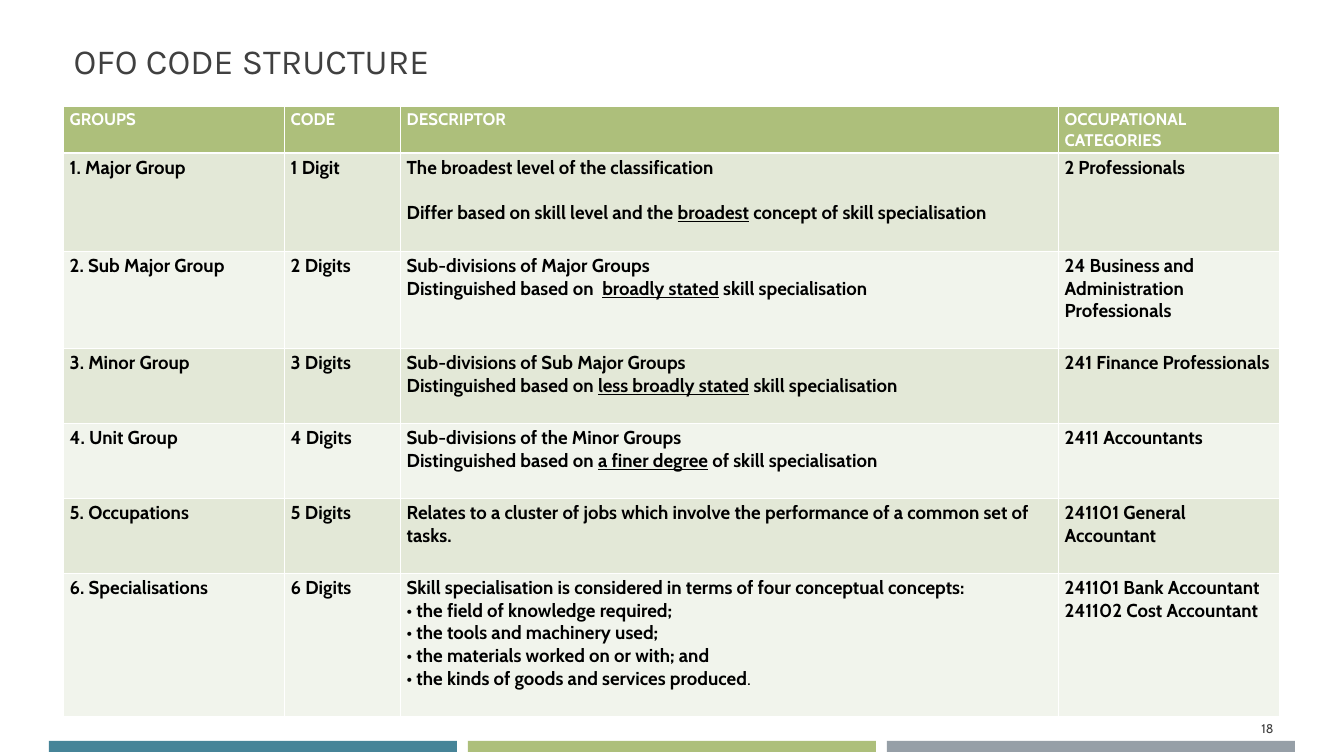
from lxml import etree
from pptx import Presentation
from pptx.dml.color import RGBColor
from pptx.enum.shapes import MSO_SHAPE
from pptx.enum.text import MSO_ANCHOR, PP_ALIGN
from pptx.oxml.ns import qn
from pptx.util import Emu, Pt

RECTANGLE = MSO_SHAPE.RECTANGLE
BOTTOM, MIDDLE = MSO_ANCHOR.BOTTOM, MSO_ANCHOR.MIDDLE
LEFT, RIGHT = PP_ALIGN.LEFT, PP_ALIGN.RIGHT

COLOURS = {
    "teal": "468498", "green": "ADBF7B", "grey": "969FA7",
    "dark_band": "E3E8D7", "light_band": "F1F4EC",
    "heading": "404040", "black": "000000", "white": "FFFFFF",
}
TITLE = {"name": "Karla", "size": Pt(37.8), "color": "heading"}
NUMBER = {"name": "Cabin", "size": Pt(13.5), "color": "heading"}
HEADER = {"name": "Cabin", "size": Pt(18), "bold": True, "color": "white"}
BODY = {"name": "Cabin", "size": Pt(20), "bold": True, "color": "black"}
UNDERLINED = {"underline": True}
PLAIN = {"bold": False}
LINE_GAP = Pt(24.3)

COLUMN_WIDTHS = [221, 116, 658, 221]
ROW_HEIGHTS = [47, 98, 97, 75, 75, 75, 143]
HEADINGS = ["GROUPS", "CODE", "DESCRIPTOR", "OCCUPATIONAL CATEGORIES"]


def distinguished(start, emphasis, end=" skill specialisation"):
    return [start, (emphasis, UNDERLINED), end]


GROUPS = [
    ("Major Group",
     [["The broadest level of the classification"],
      distinguished("Differ based on skill level and the ", "broadest",
                    " concept of skill specialisation")],
     [["2", (" ", {"size": Pt(18)}), "Professionals"]]),
    ("Sub Major Group",
     [["Sub-divisions of Major Groups"],
      distinguished("Distinguished based on  ", "broadly stated")],
     [["24 Business and Administration Professionals"]]),
    ("Minor Group",
     [["Sub-divisions of Sub Major Groups"],
      distinguished("Distinguished based on ", "less broadly stated")],
     [["241 Finance Professionals"]]),
    ("Unit Group",
     [["Sub-divisions of the Minor Groups"],
      distinguished("Distinguished based on ", "a finer degree", " of skill specialisation")],
     [["2411 Accountants"]]),
    ("Occupations",
     [["Relates to a cluster of jobs which involve the performance of a common set of tasks."]],
     [["241101 General Accountant"]]),
    ("Specialisations",
     [["Skill specialisation is considered in terms of four conceptual concepts:"],
      ["• the field of knowledge required;"],
      ["• the tools and machinery used;"],
      ["• the materials worked on or with; and"],
      ["• the kinds of goods and services produced", (".", PLAIN)]],
     [["241101 Bank Accountant"], ["241102 Cost Accountant"]]),
]


def px(length):
    return Emu(round(length * 914400 / 67.2))


def colour(name):
    return RGBColor.from_string(COLOURS[name])


class SlideBuilder:
    def __init__(self, slide):
        self.slide = slide

    def fill_text(self, frame, paragraphs, style, align=LEFT):
        for index, spans in enumerate(paragraphs):
            para = frame.paragraphs[0] if index == 0 else frame.add_paragraph()
            para.alignment = align
            for item in spans:
                text, changes = (item, {}) if isinstance(item, str) else item
                span = para.add_run()
                span.text = text
                for key, value in {**style, **changes}.items():
                    if key == "color":
                        span.font.color.rgb = colour(value)
                    else:
                        setattr(span.font, key, value)

    def text(self, left, top, width, height, words, style, anchor, align=LEFT):
        box = self.slide.shapes.add_textbox(px(left), px(top), px(width), px(height))
        box.text_frame.word_wrap = True
        box.text_frame.vertical_anchor = anchor
        self.fill_text(box.text_frame, [[words]], style, align)

    def bar(self, left, top, width, height, fill):
        bar = self.slide.shapes.add_shape(RECTANGLE, px(left), px(top), px(width), px(height))
        bar.shadow.inherit = False
        bar.fill.solid()
        bar.fill.fore_color.rgb = colour(fill)
        bar.line.fill.background()

    def border(self, cell, widths):
        properties = cell._tc.get_or_add_tcPr()
        for index, (side, points) in enumerate(widths.items()):
            line = etree.Element(qn(f"a:ln{side}"), w=str(Pt(points)))
            fill = etree.SubElement(line, qn("a:solidFill"))
            etree.SubElement(fill, qn("a:srgbClr"), val=COLOURS["white"])
            properties.insert(index, line)

    def table(self, left, top, widths, heights, rows):
        frame = self.slide.shapes.add_table(
            len(rows), len(widths), px(left), px(top), px(sum(widths)), px(sum(heights)))
        table = frame.table
        table.horz_banding = False
        for column, width in zip(table.columns, widths):
            column.width = px(width)
        for index, (row, height, contents) in enumerate(zip(table.rows, heights, rows)):
            row.height = px(height)
            band = "dark_band" if index % 2 else "light_band"
            for cell, paragraphs in zip(row.cells, contents):
                cell.fill.solid()
                cell.fill.fore_color.rgb = colour(band if index else "green")
                self.border(cell, {"L": 1, "R": 1, "T": 3 if index == 1 else 1,
                                   "B": 1 if index else 3})
                self.fill_text(cell.text_frame, paragraphs, BODY if index else HEADER)
        return table


def main():
    deck = Presentation()
    deck.slide_width, deck.slide_height = px(1344), px(756)
    page = SlideBuilder(deck.slides.add_slide(deck.slide_layouts[6]))

    for index, fill in enumerate(["teal", "green", "grey"]):
        page.bar(49 + index * 419, 741, 408, 11, fill)
    page.text(67, 31, 1216, 54, "OFO CODE STRUCTURE", TITLE, BOTTOM)

    rows = [[[[heading]] for heading in HEADINGS]]
    for number, (group, descriptor, categories) in enumerate(GROUPS, 1):
        digits = f"{number} Digit" + ("s" if number > 1 else "")
        rows.append([[[f"{number}. {group}"]], [[digits]], descriptor, categories])
    table = page.table(63, 106, COLUMN_WIDTHS, ROW_HEIGHTS, rows)
    table.cell(1, 2).text_frame.paragraphs[1].space_before = LINE_GAP

    page.text(1164, 708, 116, 41, "18", NUMBER, MIDDLE, RIGHT)
    deck.save("out.pptx")


if __name__ == "__main__":
    main()
